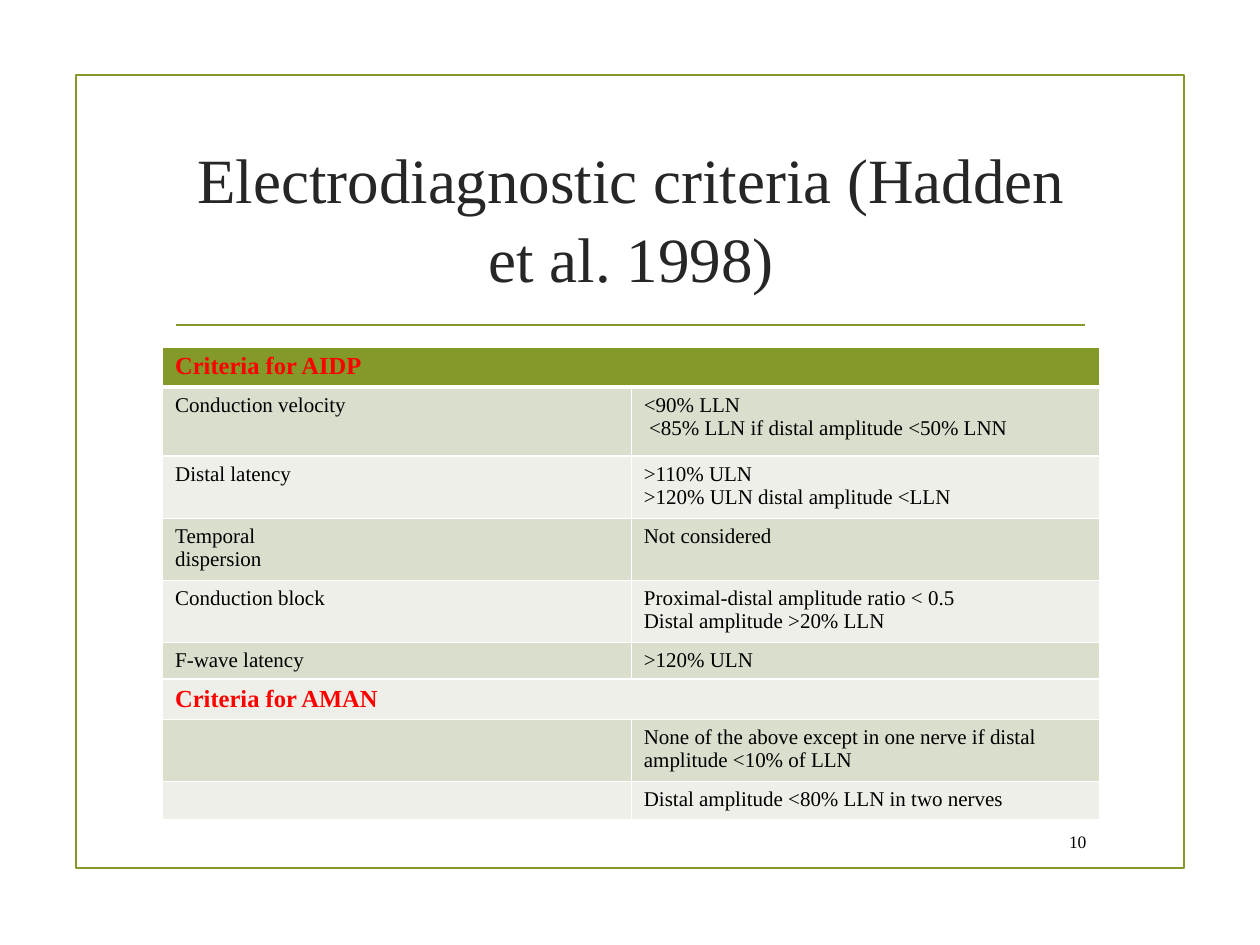
import pptx
import pptx.util
import pptx.dml.color
import pptx.enum.shapes
import pptx.enum.text
import pptx.oxml
import pptx.oxml.ns
import lxml.etree

Pt = pptx.util.Pt
Color = pptx.dml.color.RGBColor.from_string
Align = pptx.enum.text.PP_ALIGN
Anchor = pptx.enum.text.MSO_ANCHOR
qn = pptx.oxml.ns.qn

THEME = {
    "font": "Times New Roman",
    "green": "83992A",
    "dark_band": "D9DECD",
    "light_band": "EDEFE8",
    "white": "FFFFFF",
    "title": "262626",
    "text": "000000",
    "heading": "FF0000",
    "title_size": 36,
    "heading_size": 14,
    "body_size": 12,
    "number_size": 10,
}


def write(frame, text, size, color, bold=False, align=Align.LEFT, spacing=None):
    frame.word_wrap = True
    for index, line in enumerate(text.split("\n")):
        para = frame.paragraphs[0] if index == 0 else frame.add_paragraph()
        para.alignment = align
        para.line_spacing = spacing
        if not line:
            lxml.etree.SubElement(para._p, qn("a:endParaRPr"), sz=str(size * 100))
            continue
        span = para.add_run()
        span.text = line
        span.font.name = THEME["font"]
        span.font.size = Pt(size)
        span.font.bold = bold
        span.font.color.rgb = Color(color)


def paint_cell(cell, fill, bottom_width):
    cell.fill.solid()
    cell.fill.fore_color.rgb = Color(fill)
    properties = cell._tc.get_or_add_tcPr()
    widths = {"lnL": 1, "lnR": 1, "lnT": 1, "lnB": bottom_width}
    for index, (side, width) in enumerate(widths.items()):
        border = lxml.etree.Element(qn(f"a:{side}"), w=str(Pt(width)))
        solid = lxml.etree.SubElement(border, qn("a:solidFill"))
        lxml.etree.SubElement(solid, qn("a:srgbClr"), val=THEME["white"])
        properties.insert(index, border)


deck = pptx.Presentation()
deck.slide_width = Pt(720)
deck.slide_height = Pt(540)
page = deck.slides.add_slide(deck.slide_layouts[5])

title = page.shapes.title
title.left, title.top, title.width, title.height = Pt(92.9), Pt(72), Pt(535.7), Pt(103)
title.text_frame.auto_size = pptx.enum.text.MSO_AUTO_SIZE.NONE
title.text_frame.vertical_anchor = Anchor.MIDDLE
write(title.text_frame, "Electrodiagnostic criteria (Hadden et al. 1998)",
      size=THEME["title_size"], color=THEME["title"], align=Align.CENTER, spacing=1.04)

frame = page.shapes.add_shape(pptx.enum.shapes.MSO_SHAPE.RECTANGLE,
                              Pt(43.6), Pt(42.8), Pt(633), Pt(453.2))
frame.shadow.inherit = False
frame.fill.background()
frame.line.color.rgb = Color(THEME["green"])
frame.line.width = Pt(1.25)

rule = page.shapes.add_connector(pptx.enum.shapes.MSO_CONNECTOR.STRAIGHT,
                                 Pt(100.5), Pt(185.6), Pt(620), Pt(185.6))
rule.line.color.rgb = Color(THEME["green"])
rule.line.width = Pt(1.25)
lxml.etree.SubElement(rule._element.spPr, qn("a:effectLst"))

criteria = [
    (23, "Criteria for AIDP", None),
    (39.5, "Conduction velocity", "<90% LLN\n <85% LLN if distal amplitude <50% LNN"),
    (35.5, "Distal latency", ">110% ULN\n>120% ULN distal amplitude <LLN"),
    (35.5, "Temporal\ndispersion", "Not considered"),
    (35.5, "Conduction block",
     "Proximal-distal amplitude ratio < 0.5\nDistal amplitude >20% LLN"),
    (21, "F-wave latency", ">120% ULN"),
    (23, "Criteria for AMAN", None),
    (35.5, "", "None of the above except in one nerve if distal amplitude <10% of LLN"),
    (21, "", "Distal amplitude <80% LLN in two nerves"),
]
table = page.shapes.add_table(len(criteria), 2, Pt(92.9), Pt(198.2), Pt(535.7),
                              Pt(sum(height for height, _, _ in criteria))).table
for column in table.columns:
    column.width = Pt(267.85)

for index, (height, label, value) in enumerate(criteria):
    table.rows[index].height = Pt(height)
    band = THEME["dark_band"] if index % 2 else THEME["light_band"]
    fill = band if index else THEME["green"]
    left, right = table.cell(index, 0), table.cell(index, 1)
    for cell in (left, right):
        paint_cell(cell, fill, bottom_width=1 if index else 3)
    if value is None:
        left.merge(right)
        write(left.text_frame, label, size=THEME["heading_size"],
              color=THEME["heading"], bold=True)
    else:
        for cell, text in ((left, label), (right, value)):
            write(cell.text_frame, text, size=THEME["body_size"], color=THEME["text"])

number = page.shapes.add_textbox(Pt(596.9), Pt(469.5), Pt(31), Pt(22.3))
number.text_frame.vertical_anchor = Anchor.MIDDLE
write(number.text_frame, "10", size=THEME["number_size"], color=THEME["text"],
      align=Align.RIGHT)

deck.save("out.pptx")
